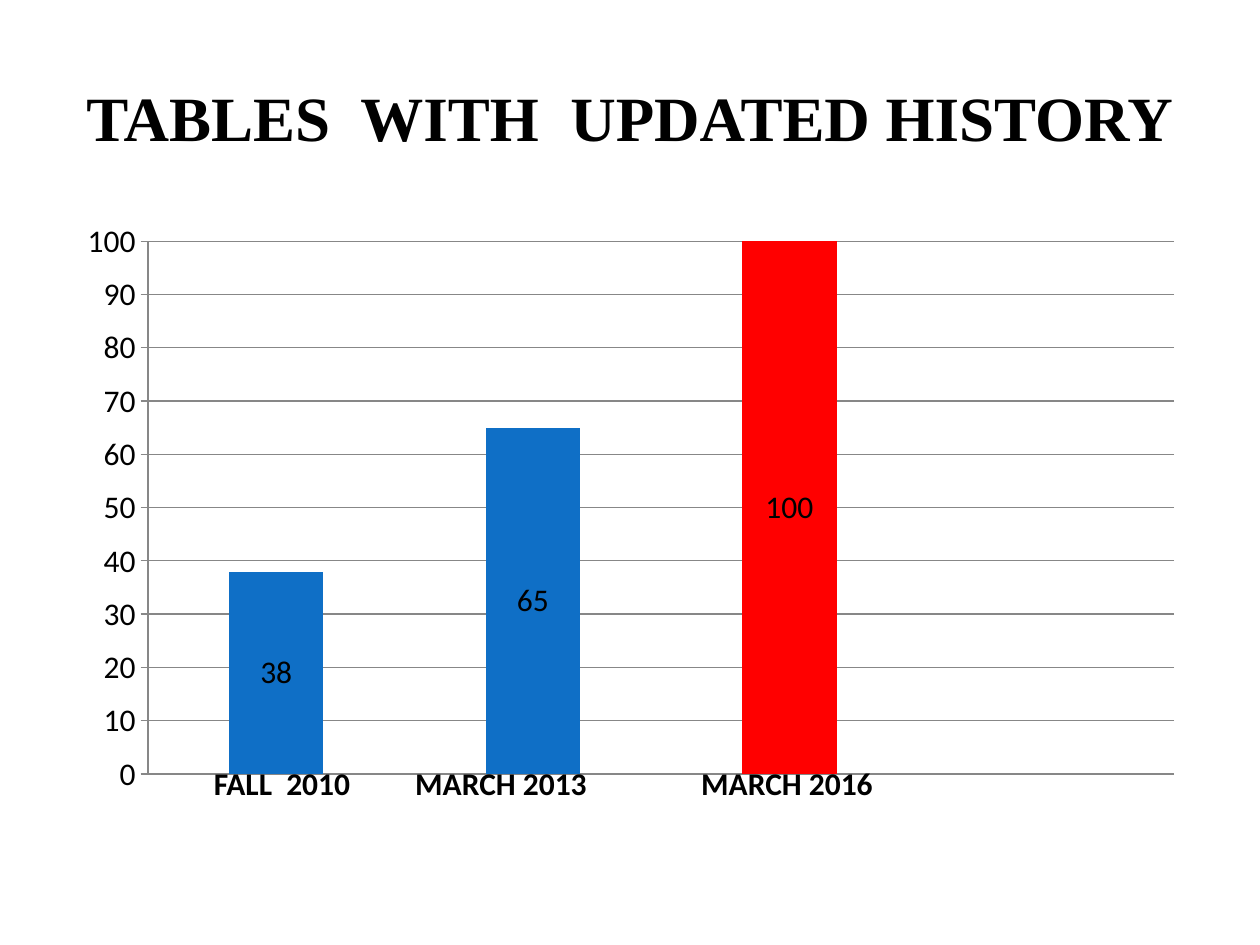
from lxml.etree import SubElement
from pptx import Presentation
from pptx.chart.data import CategoryChartData as ChartData
from pptx.dml.color import RGBColor as Color
from pptx.enum.chart import XL_CHART_TYPE as ChartType
from pptx.enum.chart import XL_LABEL_POSITION as LabelPosition
from pptx.enum.chart import XL_TICK_LABEL_POSITION as TickLabels
from pptx.enum.chart import XL_TICK_MARK as TickMark
from pptx.enum.text import MSO_ANCHOR as Anchor
from pptx.enum.text import PP_ALIGN as Align
from pptx.oxml.ns import qn
from pptx.util import Emu, Pt

COLORS = {"text": "000000", "bar": "0F6FC6", "latest": "FF0000", "line": "878787"}
HISTORY = [("FALL  2010", 38, 282), ("MARCH 2013", 65, 501), ("MARCH 2016", 100, 787)]
PLOT = {"x": 0.075, "y": 0.034, "w": 0.905, "h": 0.854}


def px(length):
    """Turn whole pixels, 126 to the inch, into EMU."""
    return Emu(round(length * 914400 / 126))


def color(name):
    """Look up a named colour."""
    return Color.from_string(COLORS[name])


def style_font(font, size, name="Calibri", bold=False):
    """Set face, size, weight and colour of a font."""
    font.name, font.size, font.bold = name, Pt(size), bold
    font.color.rgb = color("text")


def add_text(page, text, area, size, name="Calibri"):
    """Add a bold line centred in an area."""
    box = page.shapes.add_textbox(*map(px, area))
    frame = box.text_frame
    frame.word_wrap = True
    frame.vertical_anchor = Anchor.MIDDLE
    para = frame.paragraphs[0]
    para.alignment = Align.CENTER
    span = para.add_run()
    span.text = text
    style_font(span.font, size, name, bold=True)


def place_plot(chart):
    """Fix the inner plot area as fractions of the chart."""
    plot_area = chart._chartSpace.chart.plotArea
    for old in plot_area.findall(qn("c:layout")):
        plot_area.remove(old)
    layout = SubElement(plot_area, qn("c:layout"))
    plot_area.insert(0, layout)
    manual = SubElement(layout, qn("c:manualLayout"))
    settings = {"layoutTarget": "inner", "xMode": "edge", "yMode": "edge", **PLOT}
    for tag, value in settings.items():
        SubElement(manual, qn(f"c:{tag}")).set("val", str(value))


def style_axes(chart):
    """Set the scale, gridlines and ticks."""
    values, categories = chart.value_axis, chart.category_axis
    values.minimum_scale, values.maximum_scale, values.major_unit = 0, 100, 10
    values.major_tick_mark = TickMark.OUTSIDE
    values.has_major_gridlines = True
    categories.major_tick_mark = TickMark.NONE
    categories.tick_label_position = TickLabels.NONE
    for line in (values.format.line, categories.format.line,
                 values.major_gridlines.format.line):
        line.color.rgb = color("line")
        line.width = Pt(0.75)


def style_bars(chart):
    """Colour the bars and show their values in the middle."""
    plot = chart.plots[0]
    plot.gap_width, plot.overlap, plot.vary_by_categories = 172, 100, False
    series = plot.series[0]
    latest = series.points[len(HISTORY) - 1]
    for bar, name in ((series, "bar"), (latest, "latest")):
        bar.format.fill.solid()
        bar.format.fill.fore_color.rgb = color(name)
    labels = series.data_labels
    labels.show_value = True
    labels.position = LabelPosition.CENTER
    style_font(labels.font, 18)


def add_history_chart(page, area):
    """Add the column chart with a free slot at its right."""
    data = ChartData()
    data.categories = [label for label, _, _ in HISTORY] + [""]
    data.add_series("Series 1", [value for _, value, _ in HISTORY] + [None])
    frame = page.shapes.add_chart(ChartType.COLUMN_STACKED, *map(px, area), data)
    chart = frame.chart
    chart.has_title = chart.has_legend = False
    style_font(chart.font, 18)
    style_axes(chart)
    style_bars(chart)
    place_plot(chart)


def main():
    """Build and save the slide."""
    deck = Presentation()
    deck.slide_width, deck.slide_height = px(1260), px(945)
    page = deck.slides.add_slide(deck.slide_layouts[6])
    add_text(page, "TABLES  WITH  UPDATED HISTORY", (63, 38, 1134, 157), 36,
             "Times New Roman")
    add_history_chart(page, (63, 220, 1134, 624))
    for label, _, center in HISTORY:
        add_text(page, label, (center - 105, 758, 210, 50), 18)
    deck.save("out.pptx")


if __name__ == "__main__":
    main()
